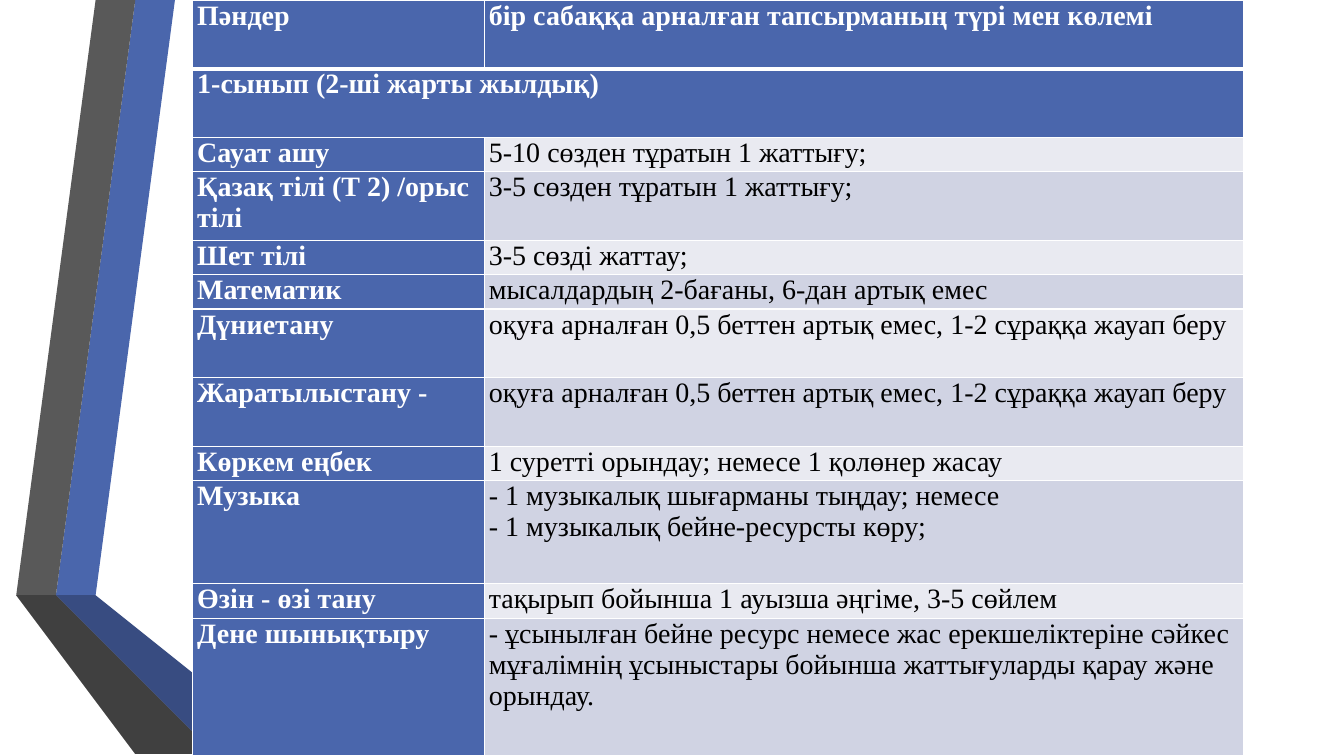
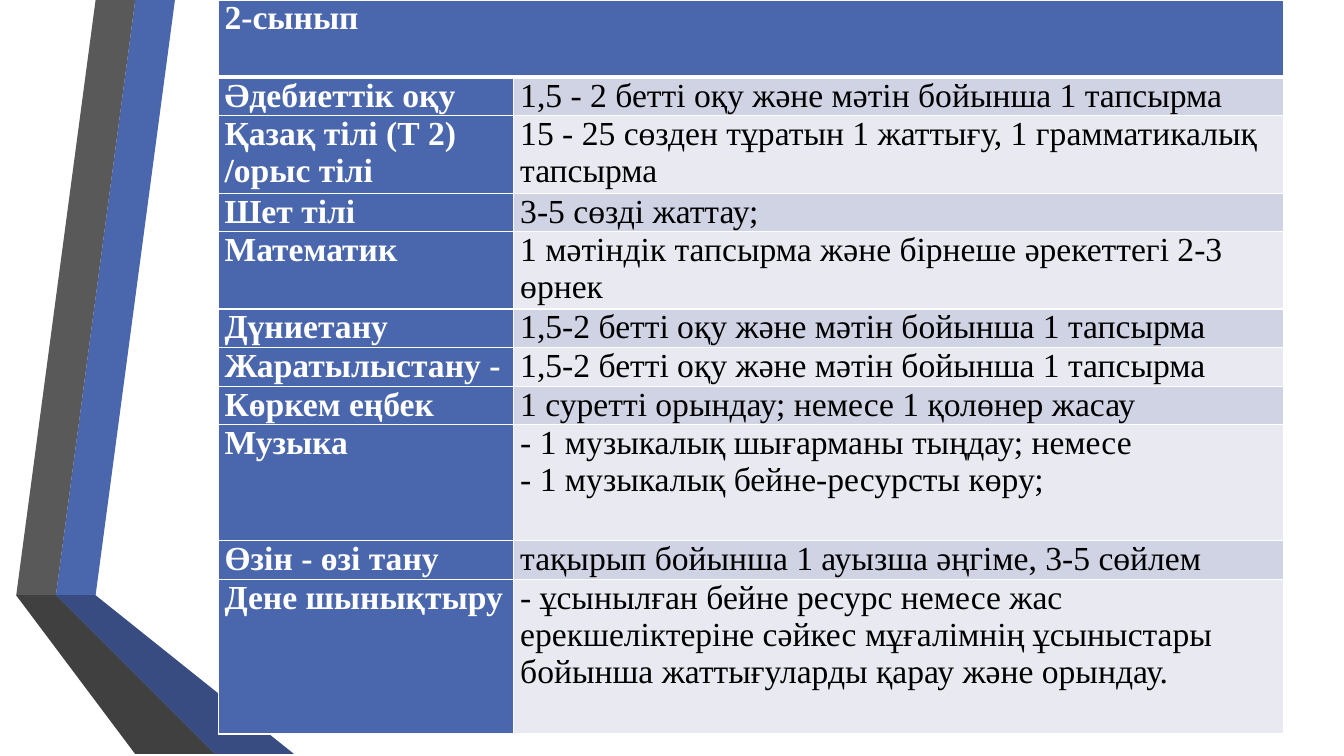
import pptx
import pptx.util
import pptx.dml.color
import pptx.oxml
import pptx.oxml.ns

Cm = pptx.util.Cm
Pt = pptx.util.Pt
RGBColor = pptx.dml.color.RGBColor

PAGE_WIDTH, PAGE_HEIGHT = 33.87, 19.05
FONT = "Times New Roman"
WHITE = RGBColor(0xFF, 0xFF, 0xFF)
BLACK = RGBColor(0x00, 0x00, 0x00)
BLUE = RGBColor(0x4A, 0x66, 0xAC)
MID_BLUE = RGBColor(0x38, 0x4C, 0x81)
DARK_BLUE = RGBColor(0x25, 0x33, 0x56)
GRAY = RGBColor(0x59, 0x59, 0x59)
DARK_GRAY = RGBColor(0x40, 0x40, 0x40)
SHADOW_GRAY = RGBColor(0x26, 0x26, 0x26)
BAND_FILLS = (RGBColor(0xE9, 0xEA, 0xF1), RGBColor(0xD0, 0xD3, 0xE3))

# Folded ribbon: colour and outline in centimetres from its top left corner
RIBBON_PARTS = [
    (BLUE, [(0.86, 14.68), (1.55, 14.81), (3.98, 0), (3.27, 0)]),
    (GRAY, [(3.12, 0), (2.41, 0), (0, 14.55), (0.71, 14.66)]),
    (SHADOW_GRAY, [(0, 14.55), (3.27, 19.05), (3.43, 19.05)]),
    (DARK_BLUE, [(0.86, 14.71), (4.87, 19.05), (5.03, 19.05)]),
    (MID_BLUE, [(0.86, 14.68), (5.03, 19.05), (6.78, 19.05), (1.55, 14.81)]),
    (DARK_GRAY, [(0, 14.55), (0.71, 14.66), (0.81, 14.81), (4.72, 19.05),
                 (3.43, 19.05)]),
]

# Texts that both grades share
MUSIC = "- 1 музыкалық шығарманы тыңдау; немесе\n- 1 музыкалық бейне-ресурсты көру;"
ART = "1 суретті орындау; немесе 1 қолөнер жасау"
SELF_STUDY = "тақырып бойынша 1 ауызша әңгіме, 3-5 сөйлем"
SPORT = ("- ұсынылған бейне ресурс немесе жас ерекшеліктеріне сәйкес мұғалімнің "
         "ұсыныстары бойынша жаттығуларды қарау және орындау.")
FOREIGN = "3-5 сөзді жаттау;"
READING_1 = "оқуға арналған 0,5 беттен артық емес, 1-2 сұраққа жауап беру"
READING_2 = "1,5-2 бетті оқу және мәтін бойынша 1 тапсырма"
LAST_ROWS = [
    (1, "Көркем еңбек", ART),
    (3, "Музыка", MUSIC),
    (1, "Өзін - өзі тану", SELF_STUDY),
    (4, "Дене шынықтыру", SPORT),
]

# Rows: height in text lines, subject, task (None for a full-width heading)
GRADE_1 = [
    (2, "Пәндер", "бір сабаққа арналған тапсырманың түрі мен көлемі"),
    (2, "1-сынып (2-ші жарты жылдық)", None),
    (1, "Сауат ашу", "5-10 сөзден тұратын 1 жаттығу;"),
    (2, "Қазақ тілі (Т 2) /орыс тілі", "3-5 сөзден тұратын 1 жаттығу;"),
    (1, "Шет тілі", FOREIGN),
    (1, "Математик", "мысалдардың 2-бағаны, 6-дан артық емес"),
    (2, "Дүниетану", READING_1),
    (2, "Жаратылыстану -", READING_1),
] + LAST_ROWS
GRADE_2 = [
    (2, "2-сынып", None),
    (1, "Әдебиеттік оқу", "1,5 - 2 бетті оқу және мәтін бойынша 1 тапсырма"),
    (2, "Қазақ тілі (Т 2) /орыс тілі",
     "15 - 25 сөзден тұратын 1 жаттығу, 1 грамматикалық тапсырма"),
    (1, "Шет тілі", FOREIGN),
    (2, "Математик", "1 мәтіндік тапсырма және бірнеше әрекеттегі 2-3 өрнек"),
    (1, "Дүниетану", READING_2),
    (1, "Жаратылыстану -", READING_2),
] + LAST_ROWS


def draw_ribbon(page, left, top):
    """Draw the folded ribbon as one group."""
    group = page.shapes.add_group_shape()
    for color, points in RIBBON_PARTS:
        builder = group.shapes.build_freeform(*points[0], scale=Cm(1))
        builder.add_line_segments(points[1:], close=True)
        part = builder.convert_to_shape(Cm(left), Cm(top))
        part.shadow.inherit = False
        part.fill.solid()
        part.fill.fore_color.rgb = color
        part.line.fill.background()
    return group


def set_borders(cell, top, bottom):
    """Give a cell white borders; widths are in points."""
    properties = cell._tc.get_or_add_tcPr()
    for side, width in (("L", 1), ("R", 1), ("T", top), ("B", bottom)):
        properties.append(pptx.oxml.parse_xml(
            f'<a:ln{side} {pptx.oxml.ns.nsdecls("a")} w="{Pt(width)}">'
            f'<a:solidFill><a:srgbClr val="{WHITE}"/></a:solidFill></a:ln{side}>'))


def format_cell(cell, text, fill, color, bold, size, margin):
    cell.margin_left = cell.margin_right = Cm(margin)
    cell.margin_top = cell.margin_bottom = 0
    cell.fill.solid()
    cell.fill.fore_color.rgb = fill
    cell.text = text
    for para in cell.text_frame.paragraphs:
        para.font.name = FONT
        para.font.size = Pt(size)
        para.font.bold = bold
        para.font.color.rgb = color


def add_task_table(page, rows, box, subject_width, size, margin):
    """Fill the box with subjects on the left and their tasks on the right."""
    left, top, width, height = box
    frame = page.shapes.add_table(len(rows), 2, Cm(left), Cm(top),
                                  Cm(width), Cm(height))
    table = frame.table
    table.columns[0].width = Cm(subject_width)
    table.columns[1].width = Cm(width - subject_width)
    line_height = height / sum(row[0] for row in rows)

    for index, (lines, subject, task) in enumerate(rows):
        table.rows[index].height = Cm(lines * line_height)
        subject_cell, task_cell = table.cell(index, 0), table.cell(index, 1)
        for cell in (subject_cell, task_cell):
            set_borders(cell, 3 if index == 1 else 1, 3 if index == 0 else 1)
        format_cell(subject_cell, subject, BLUE, WHITE, True, size, margin)
        if task is None:
            subject_cell.merge(task_cell)
        elif index == 0:
            format_cell(task_cell, task, BLUE, WHITE, True, size, margin)
        else:
            format_cell(task_cell, task, BAND_FILLS[index % 2], BLACK, False,
                        size, margin)


def main():
    deck = pptx.Presentation()
    deck.slide_width, deck.slide_height = Cm(PAGE_WIDTH), Cm(PAGE_HEIGHT)
    layout = deck.slide_layouts[6]
    first_page = deck.slides.add_slide(layout)
    second_page = deck.slides.add_slide(layout)

    # The ribbon moves to the layout, so that both slides show it
    ribbon = draw_ribbon(first_page, 0.41, 0)
    layout.shapes.element.append(ribbon.element)

    add_task_table(first_page, GRADE_1, (4.85, 0, 26.5, PAGE_HEIGHT),
                   subject_width=7.35, size=20, margin=0.12)
    add_task_table(second_page, GRADE_2, (5.5, 0, 26.85, 18.5),
                   subject_width=7.45, size=24, margin=0.16)
    deck.save("out.pptx")


if __name__ == "__main__":
    main()
